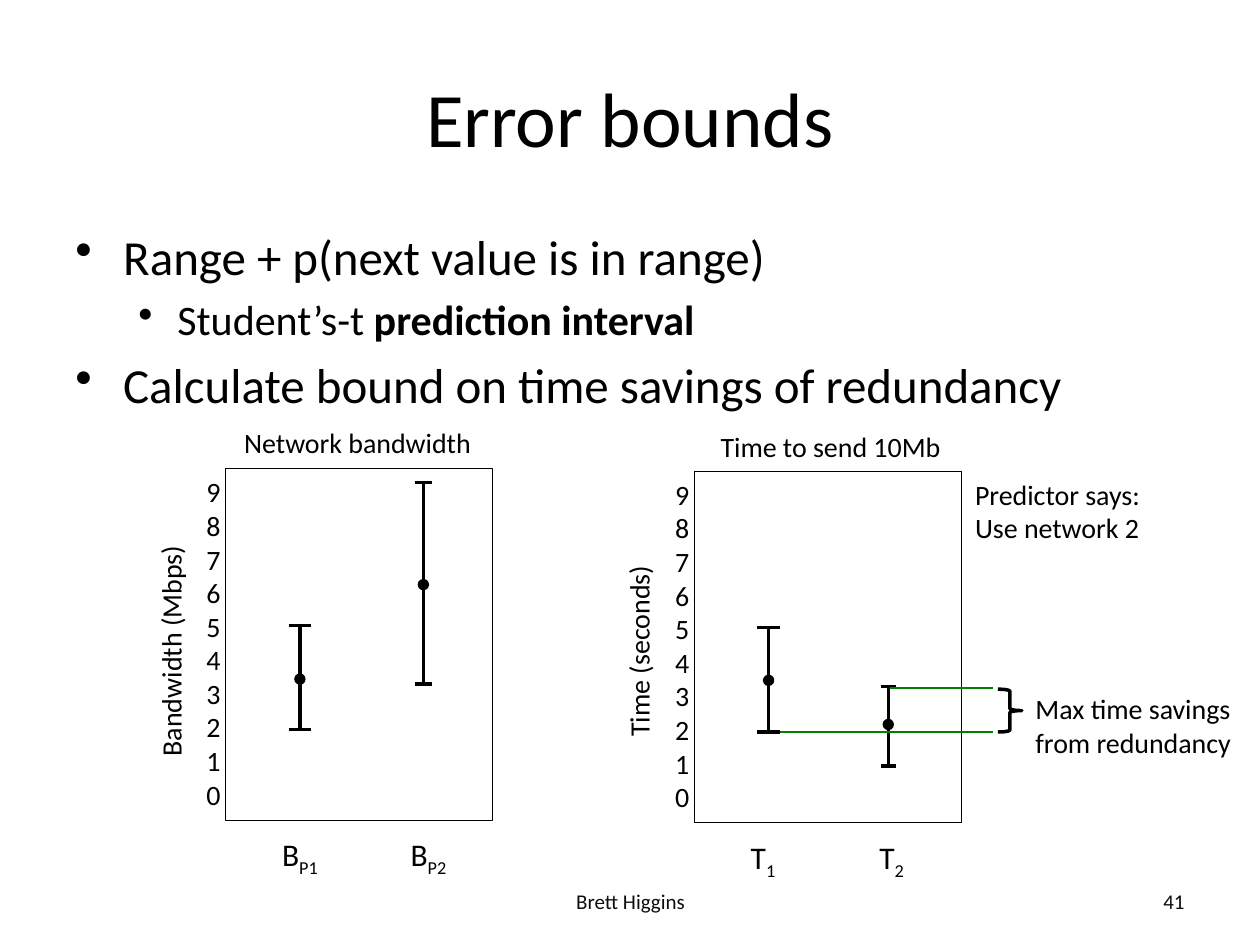
from pptx import Presentation
from pptx.dml.color import RGBColor
from pptx.enum.shapes import MSO_CONNECTOR, MSO_SHAPE
from pptx.enum.text import MSO_ANCHOR, PP_ALIGN
from pptx.oxml.ns import qn
from pptx.util import Inches, Pt
from lxml import etree

LEFT, CENTER, RIGHT = PP_ALIGN.LEFT, PP_ALIGN.CENTER, PP_ALIGN.RIGHT
TOP, MIDDLE = MSO_ANCHOR.TOP, MSO_ANCHOR.MIDDLE
COLORS = {"ink": "000000", "footer": "0D0D0D", "savings": "008000"}
FONT = "Calibri"

deck = Presentation()
deck.slide_width, deck.slide_height = Inches(10), Inches(7.5)
page = deck.slides.add_slide(deck.slide_layouts[6])


def add_text(parent, place, lines, size, color="ink", align=LEFT, anchor=TOP, wrap=True):
    """Each line is a list of (text, options) runs."""
    box = parent.add_textbox(*[Inches(n) for n in place])
    frame = box.text_frame
    frame.word_wrap = wrap
    frame.vertical_anchor = anchor
    for number, runs in enumerate(lines):
        para = frame.paragraphs[0] if number == 0 else frame.add_paragraph()
        para.alignment = align
        for text, options in runs:
            span = para.add_run()
            span.text = text
            span.font.name = FONT
            span.font.size = Pt(options.get("size", size))
            span.font.bold = options.get("bold", False)
            span.font.color.rgb = RGBColor.from_string(COLORS[color])
            if "baseline" in options:
                span._r.get_or_add_rPr().set("baseline", options["baseline"])
    return box


def add_line(parent, x1, y1, x2, y2, color="ink", width=2):
    line = parent.add_connector(
        MSO_CONNECTOR.STRAIGHT, Inches(x1), Inches(y1), Inches(x2), Inches(y2))
    line.line.color.rgb = RGBColor.from_string(COLORS[color])
    line.line.width = Pt(width)
    etree.SubElement(line._element.spPr, qn("a:effectLst"))


# Title
add_text(page.shapes, (0.5, 0.3, 9, 1.25), [[("Error bounds", {})]], 44,
         align=CENTER, anchor=MIDDLE)

# Bullets
body = add_text(page.shapes, (0.5, 1.75, 9, 4.95), [
    [("Range + p(next value is in range)", {})],
    [("Student’s-t ", {"size": 24}), ("prediction interval", {"size": 24, "bold": True})],
    [("Calculate bound on time savings of redundancy", {})],
], 28)
bullet_rules = [(0, 0.38, -0.38, 0), (1, 0.81, -0.31, 4.8), (0, 0.38, -0.38, 5.6)]
for para, (level, margin, indent, before) in zip(body.text_frame.paragraphs, bullet_rules):
    para.level = level
    properties = para._p.get_or_add_pPr()
    properties.set("marL", str(Inches(margin)))
    properties.set("indent", str(Inches(indent)))
    etree.SubElement(properties, qn("a:buChar")).set("char", "•")
    para.space_before = Pt(before)

# Plots: each error bar is (x, top, mean, bottom, half cap width)
plots = [
    {"left": 1.79, "top": 3.72,
     "title": ("Network bandwidth", (1.84, 3.33, 2.1, 0.37)),
     "axis": ("Bandwidth (Mbps)", (0.22, 4.78, 2.27, 0.37)),
     "labels": [("B", "P1"), ("B", "P2")], "label_width": 0.51,
     "bars": [(2.38, 4.965, 5.39, 5.79, 0.09), (3.36, 3.83, 4.64, 5.43, 0.07)]},
    {"left": 5.51, "top": 3.74,
     "title": ("Time to send 10Mb", (5.62, 3.36, 1.95, 0.37)),
     "axis": ("Time (seconds)", (4.25, 4.94, 1.64, 0.37)),
     "labels": [("T", "1"), ("T", "2")], "label_width": 0.41,
     "bars": [(6.1, 4.98, 5.4, 5.81, 0.09), (7.05, 5.45, 5.75, 6.08, 0.06)]},
]
DOT = 0.08
for plot in plots:
    parts = page.shapes.add_group_shape().shapes
    left, top = plot["left"], plot["top"]

    frame = parts.add_shape(
        MSO_SHAPE.RECTANGLE, Inches(left), Inches(top), Inches(2.12), Inches(2.79))
    frame.shadow.inherit = False
    frame.fill.background()
    frame.line.color.rgb = RGBColor.from_string(COLORS["ink"])
    frame.line.width = Pt(0.75)

    # The narrow box wraps the scale to one digit a line
    add_text(parts, (left - 0.25, top, 0.26, 3.06), [[("9876543210", {})]], 16)
    for number, (name, index) in enumerate(plot["labels"]):
        add_text(parts, (left + 0.35 + 1.02 * number, top + 2.86, plot["label_width"], 0.4),
                 [[(name, {}), (index, {"baseline": "-25000"})]], 18, wrap=False)

    for x, high, mean, low, cap in plot["bars"]:
        add_line(parts, x, high, x, low)
        for y in (low, high):
            add_line(parts, x - cap, y, x + cap, y)
        dot = parts.add_shape(MSO_SHAPE.OVAL, Inches(x - DOT / 2), Inches(mean - DOT / 2),
                              Inches(DOT), Inches(DOT))
        dot.shadow.inherit = False
        dot.fill.solid()
        dot.fill.fore_color.rgb = RGBColor.from_string(COLORS["ink"])
        dot.line.color.rgb = RGBColor.from_string(COLORS["ink"])
        dot.line.width = Pt(0.75)

    text, place = plot["axis"]
    add_text(parts, place, [[(text, {})]], 16).rotation = 270
    text, place = plot["title"]
    add_text(parts, place, [[(text, {})]], 16)

# Savings marked on the time plot, the last group
for x, y in ((7.06, 5.46), (6.19, 5.81)):
    add_line(parts, x, y, 7.88, y, "savings", 1)
brace = parts.add_shape(
    MSO_SHAPE.RIGHT_BRACE, Inches(7.92), Inches(5.47), Inches(0.19), Inches(0.34))
brace.shadow.inherit = False
brace.fill.background()
brace.line.color.rgb = RGBColor.from_string(COLORS["ink"])
brace.line.width = Pt(2)
add_text(parts, (8.12, 5.44, 1.8, 0.64),
         [[("Max time savings", {})], [("from redundancy", {})]], 16)
add_text(parts, (7.64, 3.74, 2.1, 0.64),
         [[("Predictor says:", {})], [("Use network 2", {})]], 16)

# Footer
add_text(page.shapes, (7.17, 6.95, 2.33, 0.4), [[("41", {})]], 12, "footer", RIGHT, MIDDLE)
add_text(page.shapes, (3.42, 6.95, 3.17, 0.4), [[("Brett Higgins", {})]], 12,
         "footer", CENTER, MIDDLE)

deck.save("out.pptx")
